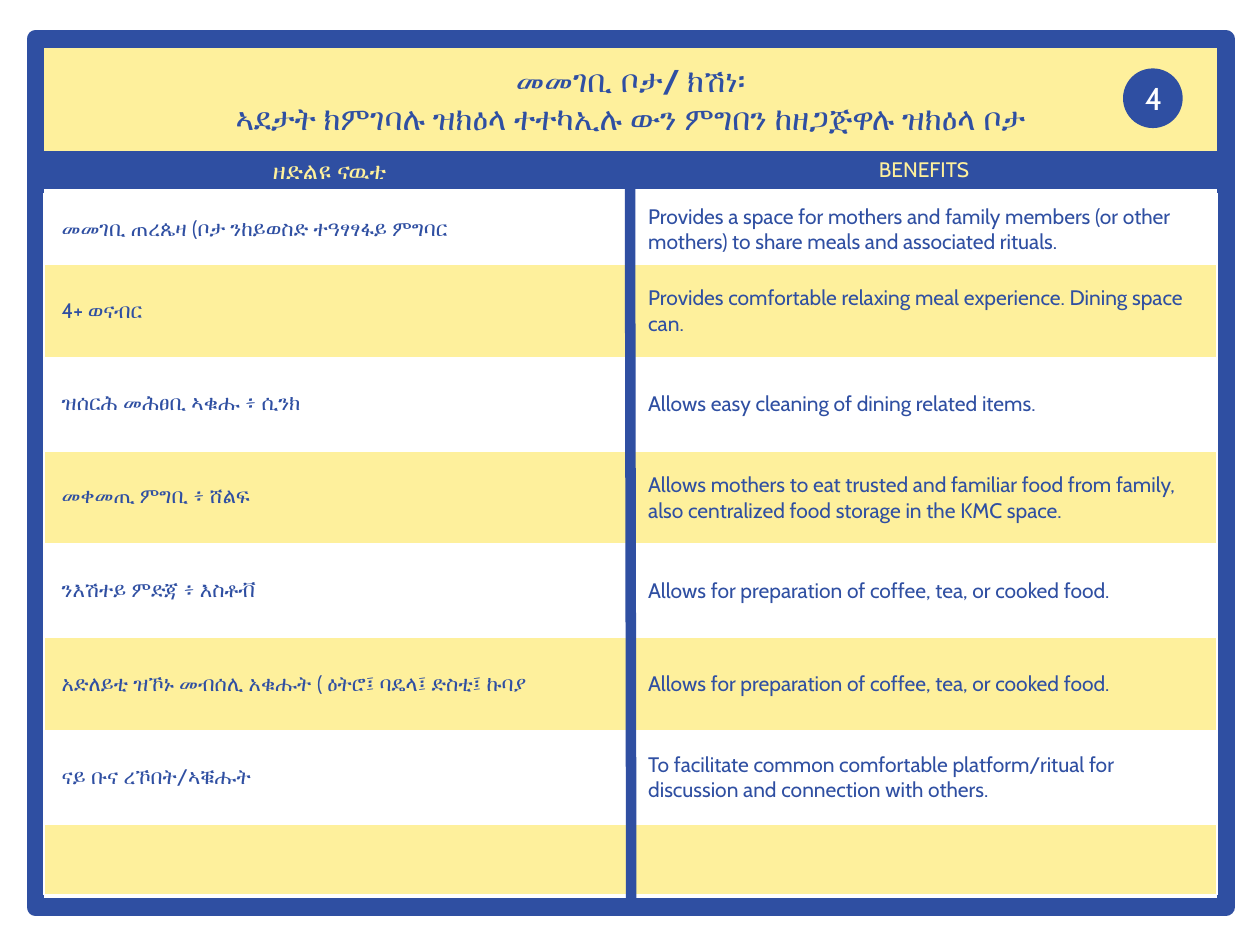
"""Build the dining and kitchen space slide on a grid of 100 columns by 75 rows."""
from dataclasses import dataclass

from lxml import etree
from pptx import Presentation
from pptx import util as u
from pptx.dml.color import RGBColor
from pptx.enum import shapes, text
from pptx.oxml import ns

BLUE = RGBColor(0x2F, 0x4F, 0xA2)
CREAM = RGBColor(0xFE, 0xF0, 0x9C)
WHITE = RGBColor(0xFF, 0xFF, 0xFF)
FONT = "Cabin"
COLS, ROWS = 100, 75
LEFT, WIDE = 2.8, 94.5
MID = 50
RECT = shapes.MSO_SHAPE.RECTANGLE
OVAL = shapes.MSO_SHAPE.OVAL

deck = Presentation()
deck.slide_width, deck.slide_height = u.Inches(10), u.Inches(7.5)
slide = deck.slides.add_slide(deck.slide_layouts[6])


@dataclass(frozen=True)
class Box:
    """Place on the grid, in columns and rows."""
    left: float
    top: float
    wide: float
    high: float

    def emu(self) -> tuple[int, ...]:
        """Return left, top, width and height as lengths."""
        return across(self.left), down(self.top), across(self.wide), down(self.high)


@dataclass(frozen=True)
class Item:
    """One piece of equipment and its benefit."""
    need: str
    gain: str
    high: float = 7.4


ITEMS = [
    Item("መመገቢ ጠረጴዛ (ቦታ ንከይወስድ ተዓፃፃፋይ ምግባር",
         "Provides a space for mothers and family members (or other mothers) "
         "to share meals and associated rituals.", 5.6),
    Item("4+ ወናብር",
         "Provides comfortable relaxing meal experience. Dining space can."),
    Item("ዝሰርሕ መሕፀቢ ኣቁሑ ፥ ሲንክ", "Allows easy cleaning of dining related items."),
    Item("መቀመጢ ምግቢ ፥ ሸልፍ",
         "Allows mothers to eat trusted and familiar food from family, "
         "also centralized food storage in the KMC space."),
    Item("ንእሽተይ ምድጃ ፥ እስቶቭ",
         "Allows for preparation of coffee, tea, or cooked food."),
    Item("አድለይቲ ዝኾኑ መብሰሊ አቁሑት ( ዕትሮ፤ ባዴላ፤ ድስቲ፤ ኩባያ",
         "Allows for preparation of coffee, tea, or cooked food."),
    Item("ናይ ቡና ረኾበት/ኣቑሑት",
         "To facilitate common comfortable platform/ritual for discussion "
         "and connection with others."),
    Item("", "", 5.6),
]


def across(cols: float) -> int:
    """Turn grid columns into a length."""
    return round(deck.slide_width * cols / COLS)


def down(rows: float) -> int:
    """Turn grid rows into a length."""
    return round(deck.slide_height * rows / ROWS)


def style(frame, size: float, color: RGBColor, align=text.PP_ALIGN.CENTER) -> None:
    """Format all runs of a text frame."""
    frame.word_wrap = True
    for para in frame.paragraphs:
        para.alignment = align
        for run in para.runs:
            run.font.name, run.font.size = FONT, u.Pt(size)
            run.font.color.rgb = color


def shape(kind, box: Box, fill: RGBColor | None = None, line: float = 0):
    """Draw a preset shape with an optional fill and blue outline."""
    form = slide.shapes.add_shape(kind, *box.emu())
    form.shadow.inherit = False
    if fill is None:
        form.fill.background()
    else:
        form.fill.solid()
        form.fill.fore_color.rgb = fill
    if line:
        form.line.color.rgb, form.line.width = BLUE, u.Pt(line)
    else:
        form.line.fill.background()
    return form


def label(box: Box, words: str, size: float, color: RGBColor):
    """Add a centred text box and return its frame."""
    frame = slide.shapes.add_textbox(*box.emu()).text_frame
    frame.text = words
    style(frame, size, color)
    return frame


def rule(x1: float, y1: float, x2: float, y2: float) -> None:
    """Draw a thick blue line."""
    line = slide.shapes.add_connector(shapes.MSO_CONNECTOR.STRAIGHT, across(x1),
                                      down(y1), across(x2), down(y2))
    line.line.color.rgb, line.line.width = BLUE, u.Pt(6)
    etree.SubElement(line._element.spPr, ns.qn("a:effectLst"))


def edge(cell) -> None:
    """Give a cell thin white borders."""
    props = cell._tc.get_or_add_tcPr()
    for spot, side in enumerate(("lnL", "lnR", "lnT", "lnB")):
        line = etree.Element(ns.qn(f"a:{side}"), w=str(u.Pt(1)))
        fill = etree.SubElement(line, ns.qn("a:solidFill"))
        etree.SubElement(fill, ns.qn("a:srgbClr"), val=str(WHITE))
        props.insert(spot, line)


def fill_cell(cell, words: str, color: RGBColor) -> None:
    """Write and format one table cell."""
    cell.text = words
    cell.vertical_anchor = text.MSO_ANCHOR.MIDDLE
    cell.margin_left, cell.margin_right = u.Inches(0.14), u.Inches(0.07)
    cell.margin_top = cell.margin_bottom = u.Inches(0.04)
    cell.fill.solid()
    cell.fill.fore_color.rgb = color
    style(cell.text_frame, 12, BLUE, text.PP_ALIGN.LEFT)
    edge(cell)


def grid(box: Box, items: list[Item]) -> None:
    """Draw the two-column table in alternating bands."""
    table = slide.shapes.add_table(len(items), 2, *box.emu()).table
    table.first_row = table.horz_banding = False
    for col in table.columns:
        col.width = across(box.wide / 2)
    for row, item in enumerate(items):
        table.rows[row].height = down(item.high)
        for col, words in enumerate((item.need, item.gain)):
            fill_cell(table.cell(row, col), words, CREAM if row % 2 else WHITE)


def main() -> None:
    """Draw the slide and save it."""
    shape(RECT, Box(LEFT, 3.1, WIDE, 11.8), CREAM)
    shape(RECT, Box(LEFT, 3.1, WIDE, 68.9), line=10)
    shape(RECT, Box(LEFT, 12, WIDE, 3), BLUE)
    label(Box(LEFT, 11.9, 46.7, 3.4), "ዘድልዩ ናዉቲ", 14, CREAM)
    label(Box(MID, 11.9, 46.7, 3), "BENEFITS", 12, CREAM)
    grid(Box(3.5, 15.4, 93.1, sum(item.high for item in ITEMS)), ITEMS)
    rule(MID, 14.6, MID + 0.1, 71.5)
    title = label(Box(LEFT, 4.3, WIDE, 7.1),
                  "መመገቢ ቦታ/ ክሽነ፡\nኣደታት ክምገባሉ ዝክዕላ ተተካኢሉ ውን ምግበን ከዘጋጅዋሉ ዝክዕላ ቦታ",
                  18, BLUE)
    title.vertical_anchor = text.MSO_ANCHOR.MIDDLE
    title.paragraphs[0].runs[0].font.bold = True
    rule(LEFT, 14.6, 96.6, 14.6)
    badge = shape(OVAL, Box(89.2, 5.5, 4.6, 4.6), BLUE, 1).text_frame
    badge.text = "4"
    badge.vertical_anchor = text.MSO_ANCHOR.MIDDLE
    style(badge, 18, WHITE)
    deck.save("out.pptx")


if __name__ == "__main__":
    main()
